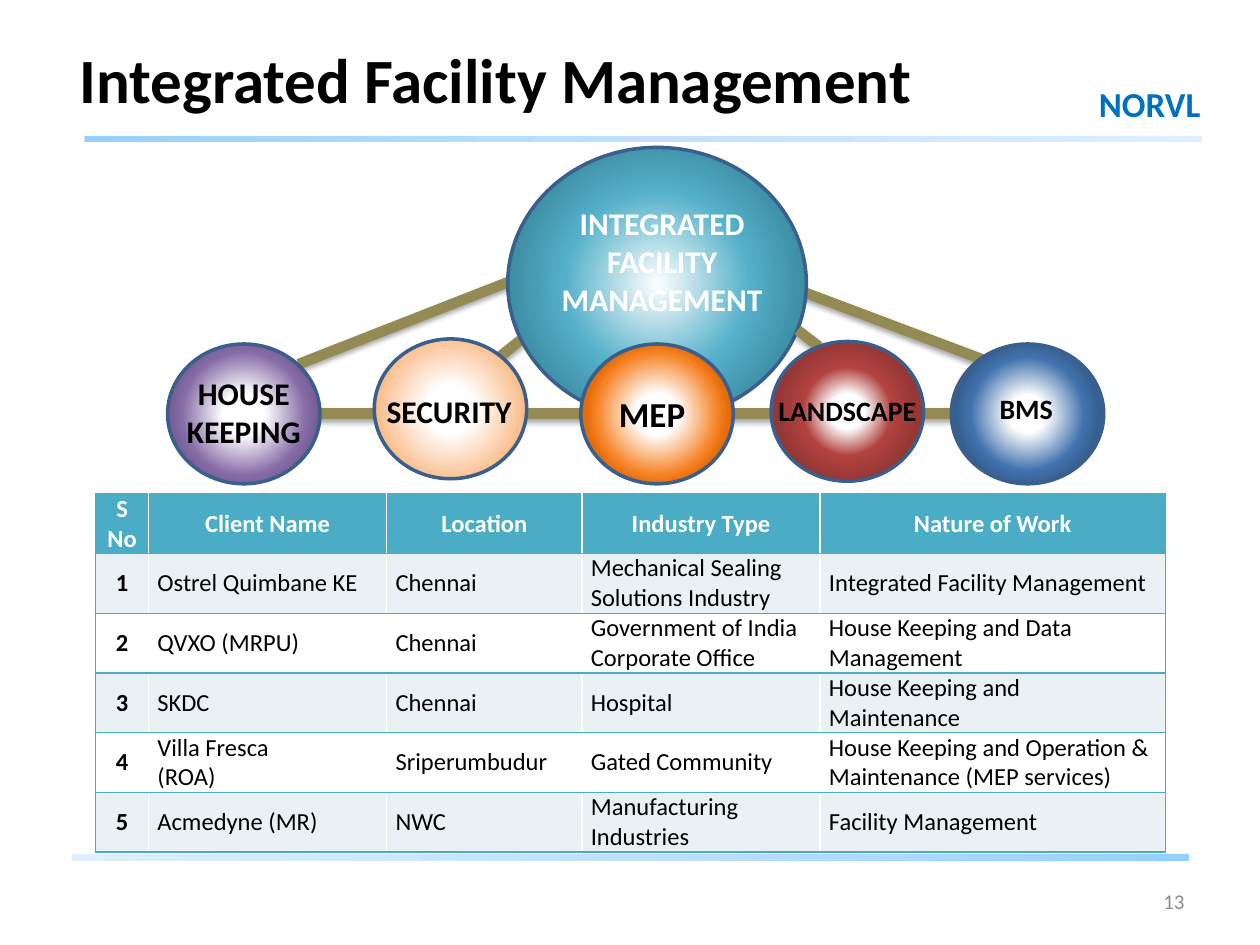
from lxml import etree
from pptx import Presentation
from pptx.dml.color import RGBColor
from pptx.enum.shapes import MSO_CONNECTOR, MSO_SHAPE
from pptx.enum.text import MSO_ANCHOR, MSO_AUTO_SIZE, PP_ALIGN
from pptx.oxml.ns import qn
from pptx.util import Inches, Pt

STRAIGHT = MSO_CONNECTOR.STRAIGHT
RECTANGLE, OVAL = MSO_SHAPE.RECTANGLE, MSO_SHAPE.OVAL
MIDDLE = MSO_ANCHOR.MIDDLE
NO_AUTOFIT = MSO_AUTO_SIZE.NONE
LEFT, CENTER, RIGHT = PP_ALIGN.LEFT, PP_ALIGN.CENTER, PP_ALIGN.RIGHT

FONT = "Calibri"
TITLE_ONLY = 5
COLORS = {
    "white": "FFFFFF",
    "black": "000000",
    "brand": "0070C0",
    "number": "8C8C8C",
    "spoke": "948A54",
    "outline": "3A5F8C",
    "teal": "4BACC6",
    "band": "E9F1F5",
}
BAR_STOPS = [(0, "96D0FF"), (50, "BFE1FF"), (100, "E0EFFF")]
SPOKES = [
    (4.13, 2.7, 3.88, 2.9),
    (8.03, 2.94, 6.33, 2.3),
    (4.03, 2.24, 2.37, 2.89),
]
FRONT_LINES = [(2.36, 3.28, 7.76, 3.28), (6.33, 2.62, 6.5, 2.75)]
HUB_STOPS = [(0, "FFFFFF"), (46, "54B0C9"), (100, "276A7C")]
SERVICES = [
    (2.97, 2.69, [(0, "FFFFFF"), (23, "FFFFFF"), (100, "F79646")]),
    (1.33, 2.73, [(20, "FFFFFF"), (60, "866CA7"), (100, "4D3B62")]),
    (4.61, 2.73, [(20, "FFFFFF"), (59, "F68325"), (69, "E46C0A"), (97, "D56509")]),
    (7.55, 2.73, [(18, "FFFFFF"), (55, "4172AD"), (69, "376092"), (97, "335A88")]),
    (6.12, 2.71, [(17, "FFFFFF"), (43, "B1423F"), (69, "953735"), (97, "8B3431")]),
]
SERVICE_LABELS = [
    ("HOUSE KEEPING", 1.25, 2.93, 18),
    ("SECURITY", 2.88, 2.92, 18),
    ("MEP", 4.49, 2.94, 20),
    ("LANDSCAPE", 6.04, 2.92, 16),
    ("BMS", 7.46, 2.9, 16),
]
COLUMN_WIDTHS = [0.42, 1.89, 1.55, 1.89, 2.74]
ROW_HEIGHT = 0.47
CLIENTS = [
    ["S No", "Client Name", "Location", "Industry Type", "Nature of Work"],
    ["1", "Ostrel Quimbane KE", "Chennai", "Mechanical Sealing Solutions Industry",
     "Integrated Facility Management"],
    ["2", "QVXO (MRPU)", "Chennai", "Government of India\nCorporate Office",
     "House Keeping and Data Management"],
    ["3", "SKDC", "Chennai", "Hospital", "House Keeping and Maintenance"],
    ["4", "Villa Fresca\n(ROA)", "Sriperumbudur", "Gated Community",
     "House Keeping and Operation & Maintenance (MEP services)"],
    ["5", "Acmedyne (MR)", "NWC", "Manufacturing Industries", "Facility Management"],
]


def rgb(value):
    return RGBColor.from_string(value)


def add_node(parent, tag, **attributes):
    return etree.SubElement(parent, qn(tag), attributes)


def write_text(frame, text, size, color, bold=False, align=LEFT):
    for index, line in enumerate(text.split("\n")):
        para = frame.paragraphs[0] if index == 0 else frame.add_paragraph()
        para.alignment = align
        span = para.add_run()
        span.text = line
        span.font.name = FONT
        span.font.size = Pt(size)
        span.font.bold = bold
        span.font.color.rgb = rgb(color)


def add_label(page, text, left, top, width, height, size, color, bold=True,
              align=CENTER, wrap=True):
    box = page.shapes.add_textbox(Inches(left), Inches(top), Inches(width), Inches(height))
    frame = box.text_frame
    frame.word_wrap = wrap
    frame.auto_size = NO_AUTOFIT
    frame.vertical_anchor = MIDDLE
    write_text(frame, text, size, color, bold, align)


def add_gradient_shape(page, kind, left, top, width, height, stops, angle=None):
    shape = page.shapes.add_shape(kind, Inches(left), Inches(top), Inches(width), Inches(height))
    shape.shadow.inherit = False
    shape.fill.gradient()
    gradient = shape._element.spPr.find(qn("a:gradFill"))
    for child in list(gradient):
        gradient.remove(child)
    stop_list = add_node(gradient, "a:gsLst")
    for position, color in stops:
        stop = add_node(stop_list, "a:gs", pos=str(position * 1000))
        add_node(stop, "a:srgbClr", val=color)
    if angle is None:
        path = add_node(gradient, "a:path", path="circle")
        add_node(path, "a:fillToRect", l="50000", t="50000", r="50000", b="50000")
        shape.line.color.rgb = rgb(COLORS["outline"])
        shape.line.width = Pt(2)
    else:
        add_node(gradient, "a:lin", ang=str(angle * 60000), scaled="0")
        shape.line.fill.background()


def add_spoke(page, x1, y1, x2, y2):
    spoke = page.shapes.add_connector(STRAIGHT, Inches(x1), Inches(y1), Inches(x2), Inches(y2))
    spoke.line.color.rgb = rgb(COLORS["spoke"])
    spoke.line.width = Pt(6)
    effects = add_node(spoke._element.spPr, "a:effectLst")
    shadow = add_node(effects, "a:outerShdw", blurRad=str(Pt(3.1)), dist=str(Pt(1.8)),
                      dir="5400000", rotWithShape="0")
    color = add_node(shadow, "a:srgbClr", val=COLORS["black"])
    add_node(color, "a:alpha", val="35000")


def add_diagram(page):
    for spoke in SPOKES:
        add_spoke(page, *spoke)
    add_gradient_shape(page, OVAL, 4.03, 1.17, 2.37, 2.16, HUB_STOPS)
    for line in FRONT_LINES:
        add_spoke(page, *line)
    for left, top, stops in SERVICES:
        add_gradient_shape(page, OVAL, left, top, 1.21, 1.11, stops)
    add_label(page, "INTEGRATED FACILITY MANAGEMENT", 4.25, 1.73, 2.01, 0.68, 18,
              COLORS["white"])
    for text, left, top, size in SERVICE_LABELS:
        add_label(page, text, left, top, 1.37, 0.68, size, COLORS["black"])


def set_borders(cell, sides):
    properties = cell._tc.get_or_add_tcPr()
    for side in sides:
        line = add_node(properties, f"a:ln{side}", w=str(Pt(1)))
        fill = add_node(line, "a:solidFill")
        add_node(fill, "a:srgbClr", val=COLORS["teal"])


def add_client_table(page):
    rows, columns = len(CLIENTS), len(COLUMN_WIDTHS)
    table = page.shapes.add_table(rows, columns, Inches(0.76), Inches(3.92),
                                  Inches(sum(COLUMN_WIDTHS)), Inches(ROW_HEIGHT * rows)).table
    for column, width in zip(table.columns, COLUMN_WIDTHS):
        column.width = Inches(width)
    for r, row in enumerate(CLIENTS):
        table.rows[r].height = Inches(ROW_HEIGHT)
        header = r == 0
        background = "teal" if header else "band" if r % 2 else "white"
        for c, text in enumerate(row):
            cell = table.cell(r, c)
            cell.margin_left = cell.margin_right = Inches(0.07)
            cell.margin_top = cell.margin_bottom = 0
            cell.vertical_anchor = MIDDLE
            sides = {0: "LTB", columns - 1: "RTB"}.get(c, "TB")
            set_borders(cell, sides)
            cell.fill.solid()
            cell.fill.fore_color.rgb = rgb(COLORS[background])
            strong = header or c == 0
            write_text(cell.text_frame, text, 14, COLORS["white" if header else "black"],
                       strong, CENTER if strong else LEFT)


def add_title(page, text):
    title = page.shapes.title
    title.left, title.top = Inches(0.53), Inches(0.2)
    title.width, title.height = Inches(6.97), Inches(0.84)
    title.text_frame.auto_size = NO_AUTOFIT
    title.text_frame.vertical_anchor = MIDDLE
    write_text(title.text_frame, text, 36, COLORS["black"], True)


def main():
    deck = Presentation()
    deck.slide_width, deck.slide_height = Inches(10), Inches(7.5)
    page = deck.slides.add_slide(deck.slide_layouts[TITLE_ONLY])
    add_gradient_shape(page, RECTANGLE, 0.67, 1.08, 8.87, 0.05, BAR_STOPS, 0)
    add_gradient_shape(page, RECTANGLE, 0.57, 6.78, 8.87, 0.05, BAR_STOPS, 180)
    add_label(page, "NORVL", 8.78, 0.7, 0.69, 0.25, 20, COLORS["brand"], wrap=False)
    add_diagram(page)
    add_client_table(page)
    add_title(page, "Integrated Facility Management")
    add_label(page, "13", 7.17, 6.95, 2.33, 0.4, 12, COLORS["number"], False, RIGHT)
    deck.save("out.pptx")


if __name__ == "__main__":
    main()
